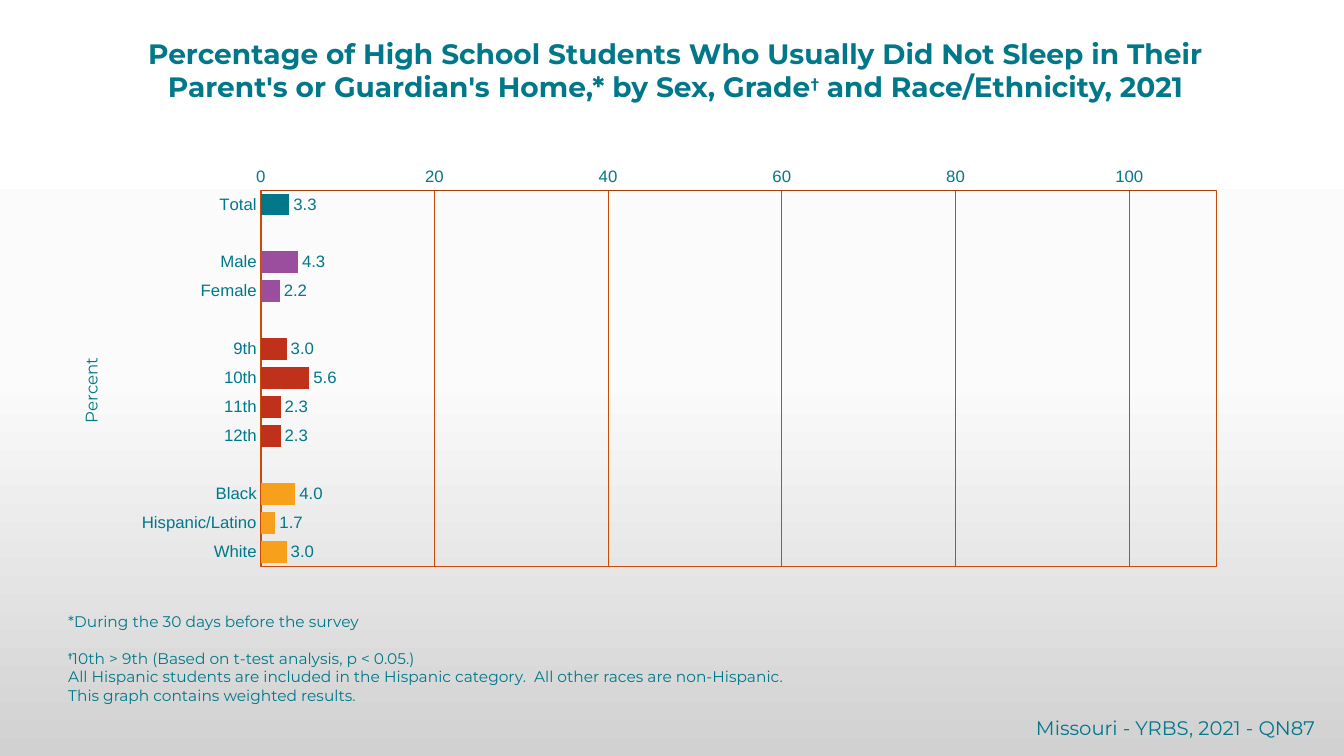
from lxml.etree import SubElement
from pptx import Presentation
from pptx.chart.data import CategoryChartData
from pptx.dml.color import RGBColor
from pptx.enum.chart import XL_CHART_TYPE, XL_LABEL_POSITION, XL_TICK_MARK
from pptx.enum.text import MSO_ANCHOR, PP_ALIGN
from pptx.oxml import parse_xml
from pptx.oxml.ns import nsdecls, qn
from pptx.util import Cm, Pt

TEAL = RGBColor(0x00, 0x78, 0x89)
FOOTER_TEAL = RGBColor(0x00, 0x78, 0x8A)
PURPLE = RGBColor(0x9B, 0x4E, 0x9E)
RED = RGBColor(0xBF, 0x31, 0x1B)
AMBER = RGBColor(0xF7, 0xA0, 0x1B)
ORANGE = RGBColor(0xCC, 0x4A, 0x05)
BROWN = RGBColor(0xAA, 0x3D, 0x04)

BACKGROUND_STOPS = [(0, "FFFFFF"), (50, "FBFBFB"), (100, "D1D1D1")]

# Groups of bars: colour and (label, percent); an empty row separates groups
GROUPS = [
    (TEAL, [("Total", 3.3)]),
    (PURPLE, [("Male", 4.3), ("Female", 2.2)]),
    (RED, [("9th", 3.0), ("10th", 5.6), ("11th", 2.3), ("12th", 2.3)]),
    (AMBER, [("Black", 4.0), ("Hispanic/Latino", 1.7), ("White", 3.0)]),
]

# Paragraphs as lists of (text, size, bold, baseline percent)
TITLE = [[
    ("Percentage of High School Students Who Usually Did Not Sleep in Their "
     "Parent's or Guardian's Home,* by Sex, Grade", 20, True, 0),
    ("†", 17, True, 40),
    (" and Race/Ethnicity, 2021", 20, True, 0),
]]
FOOTNOTES = [
    [("*During the 30 days before the survey", 11, False, 0)],
    [("†", 9, True, 50),
     ("10th > 9th (Based on t-test analysis, p < 0.05.)", 11, False, 0)],
    [("All Hispanic students are included in the Hispanic category.  "
      "All other races are non-Hispanic.", 11, False, 0)],
    [("This graph contains weighted results.", 11, False, 0)],
]
SOURCE = [[("Missouri - YRBS, 2021 - QN87", 14, False, 0)]]


def style_font(font, size, name, color=TEAL, bold=False):
    font.size = Pt(size)
    font.name = name
    font.bold = bold
    font.color.rgb = color


def style_line(line, color, width):
    line.color.rgb = color
    line.width = Pt(width)


def set_background(slide):
    fill = slide.background.fill
    fill.gradient()
    fill.gradient_angle = 270
    stop_list = slide.element.find(".//" + qn("a:gsLst"))
    for stop in list(stop_list):
        stop_list.remove(stop)
    for position, color in BACKGROUND_STOPS:
        stop = SubElement(stop_list, qn("a:gs"), pos=str(position * 1000))
        SubElement(stop, qn("a:srgbClr"), val=color)


def add_text(slide, box, paragraphs, align, color=TEAL, anchor=MSO_ANCHOR.TOP):
    frame = slide.shapes.add_textbox(*map(Cm, box)).text_frame
    frame.word_wrap = True
    frame.vertical_anchor = anchor
    for index, runs in enumerate(paragraphs):
        paragraph = frame.paragraphs[0] if index == 0 else frame.add_paragraph()
        paragraph.alignment = align
        for text, size, bold, baseline in runs:
            run = paragraph.add_run()
            run.text = text
            style_font(run.font, size, "Montserrat", color, bold)
            if baseline:
                run._r.get_or_add_rPr().set("baseline", str(baseline * 1000))
    return frame


def manual_layout(x, y, size=None):
    parts = [("xMode", "edge"), ("yMode", "edge"), ("x", x), ("y", y)]
    if size:
        parts.insert(0, ("layoutTarget", "inner"))
        parts += zip("wh", size)
    inner = "".join(f'<c:{tag} val="{value}"/>' for tag, value in parts)
    return parse_xml(f'<c:layout {nsdecls("c")}><c:manualLayout>{inner}'
                     "</c:manualLayout></c:layout>")


def place(parent, layout, index):
    for old in parent.findall(qn("c:layout")):
        parent.remove(old)
    parent.insert(index, layout)


def style_axes(chart):
    categories, percent = chart.category_axis, chart.value_axis
    for axis, color in ((categories, ORANGE), (percent, BROWN)):
        axis.major_tick_mark = axis.minor_tick_mark = XL_TICK_MARK.NONE
        style_font(axis.tick_labels.font, 12, "Arial")
        style_line(axis.format.line, color, 0.25)
    categories.reverse_order = True
    percent.minimum_scale, percent.maximum_scale = 0, 110
    percent.major_unit = 20
    percent.tick_labels.number_format = "General"
    percent.tick_labels.number_format_is_linked = False
    style_line(percent.major_gridlines.format.line, ORANGE, 0.5)

    # Rotated axis title at the left edge
    title = percent.axis_title
    run = title.text_frame.paragraphs[0].add_run()
    run.text = "Percent"
    style_font(run.font, 12, "Montserrat")
    body = title.text_frame._txBody.bodyPr
    body.set("rot", "-5400000")
    body.set("vert", "horz")
    place(title._element, manual_layout(0.015, 0.39), 1)


def add_percent_chart(slide):
    data = CategoryChartData()
    values, colors = [], []
    for color, rows in GROUPS:
        if values:
            rows = [("", None)] + rows
        for label, value in rows:
            data.add_category(label)
            values.append(value)
            colors.append(color)
    data.add_series("Series 1", values)
    chart = slide.shapes.add_chart(
        XL_CHART_TYPE.BAR_CLUSTERED,
        Cm(1.47), Cm(4.24), Cm(30.91), Cm(11.85), data).chart
    chart.has_legend = chart.has_title = False
    style_font(chart.font, 18, "Montserrat")
    style_axes(chart)

    # Bars and their labels
    plot = chart.plots[0]
    plot.gap_width = 34
    plot.vary_by_categories = False
    series = plot.series[0]
    series.format.fill.solid()
    series.format.fill.fore_color.rgb = TEAL
    for index, (value, color) in enumerate(zip(values, colors)):
        if value is not None:
            fill = series.points[index].format.fill
            fill.solid()
            fill.fore_color.rgb = color
    labels = series.data_labels
    labels.show_value = True
    labels.position = XL_LABEL_POSITION.OUTSIDE_END
    labels.number_format = "#,##0.0"
    labels.number_format_is_linked = False
    style_font(labels.font, 12, "Arial")

    # Plot frame
    plot_area = chart._chartSpace.chart.plotArea
    place(plot_area, manual_layout(0.165, 0.035, (0.779, 0.81)), 0)
    plot_area.append(parse_xml(
        f'<c:spPr {nsdecls("c", "a")}><a:noFill/><a:ln w="6350"><a:solidFill>'
        f'<a:srgbClr val="{ORANGE}"/></a:solidFill></a:ln></c:spPr>'))


def main():
    prs = Presentation()
    prs.slide_width, prs.slide_height = Cm(33.87), Cm(19.05)
    slide = prs.slides.add_slide(prs.slide_layouts[6])
    set_background(slide)
    add_percent_chart(slide)
    footnotes = add_text(slide, (1.47, 15.24, 30.91, 2.64), FOOTNOTES,
                         PP_ALIGN.LEFT, anchor=MSO_ANCHOR.BOTTOM)
    footnotes.paragraphs[0].space_after = Pt(13)
    add_text(slide, (1.9, 0.79, 30.25, 1.96), TITLE, PP_ALIGN.CENTER)
    add_text(slide, (9.52, 17.91, 23.88, 0.86), SOURCE, PP_ALIGN.RIGHT,
             FOOTER_TEAL)
    prs.save("out.pptx")


if __name__ == "__main__":
    main()
